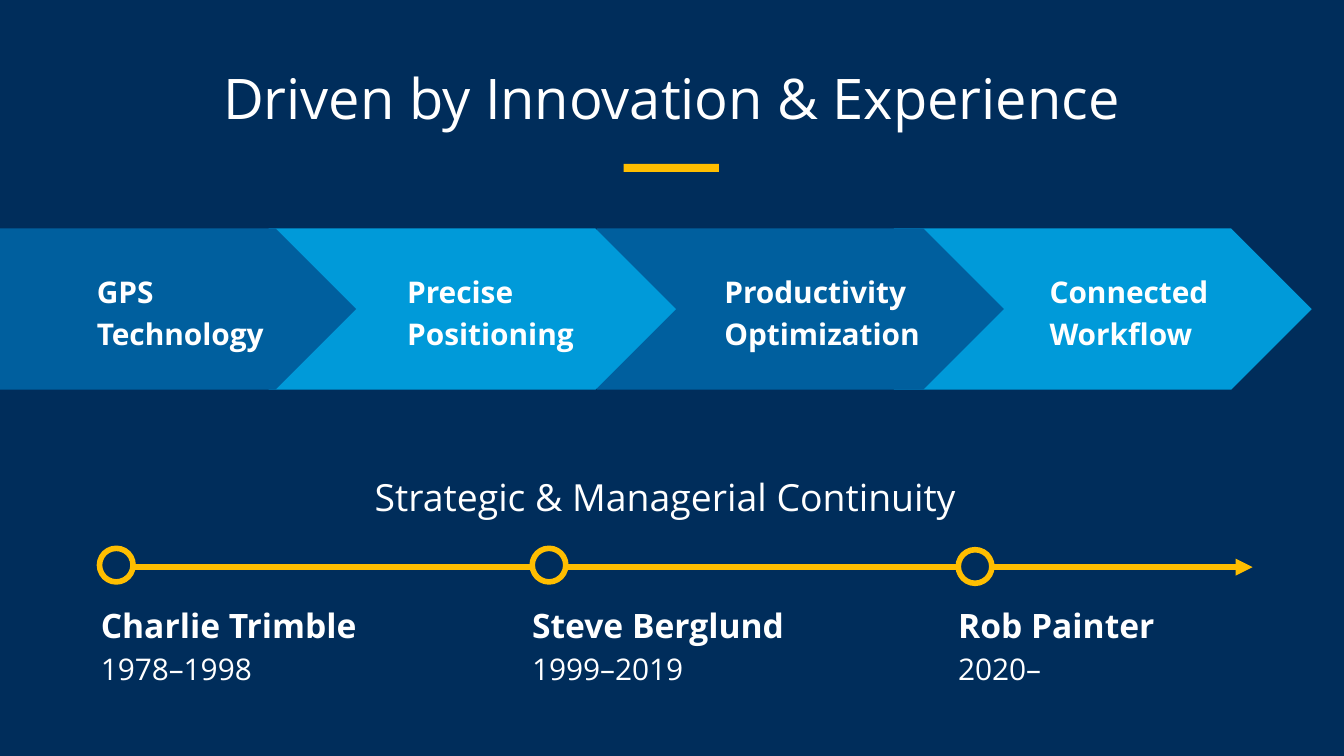
from lxml.etree import SubElement
from pptx import Presentation
from pptx.dml.color import RGBColor
from pptx.enum.shapes import MSO_CONNECTOR, MSO_SHAPE
from pptx.enum.text import MSO_ANCHOR, PP_ALIGN
from pptx.oxml.ns import qn
from pptx.util import Inches, Pt

NAVY = RGBColor(0x00, 0x2D, 0x5B)
BLUE = RGBColor(0x00, 0x5F, 0x9E)
SKY = RGBColor(0x00, 0x9A, 0xD9)
GOLD = RGBColor(0xFF, 0xBE, 0x00)
WHITE = RGBColor(0xFF, 0xFF, 0xFF)
FONT = "Open Sans"

# Arrow left, arrow width, label left, label width, label, colour
STAGES = [
    (0, 2.65, 0.57, 1.62, "GPS \nTechnology", BLUE),
    (2, 3.03, 2.88, 1.67, "Precise Positioning", SKY),
    (4.44, 3.03, 5.24, 1.74, "Productivity Optimization", BLUE),
    (6.65, 3.11, 7.66, 1.6, "Connected Workflow", SKY),
]
# Text left, text width, marker left, marker top, name, years
LEADERS = [
    (0.75, 2.11, 0.74, 4.08, "Charlie Trimble", "1978–1998"),
    (3.96, 2.84, 3.96, 4.08, "Steve Berglund", "1999–2019"),
    (7.13, 2.16, 7.13, 4.09, "Rob Painter", "2020–"),
]


def add_text(slide, box, lines, insets=(0, 0.1, 0.1, 0.1), align=PP_ALIGN.LEFT,
             anchor=MSO_ANCHOR.TOP, spacing=1.15):
    """Add a text box; each line is (text, size, bold), insets run left, top, right, bottom."""
    frame = slide.shapes.add_textbox(*map(Inches, box)).text_frame
    frame.word_wrap = True
    frame.vertical_anchor = anchor
    (frame.margin_left, frame.margin_top,
     frame.margin_right, frame.margin_bottom) = map(Inches, insets)
    for index, (text, size, bold) in enumerate(lines):
        paragraph = frame.add_paragraph() if index else frame.paragraphs[0]
        paragraph.text = text
        paragraph.alignment = align
        paragraph.line_spacing = spacing
        for run in paragraph.runs:
            run.font.name = FONT
            run.font.size = Pt(size)
            run.font.bold = bold
            run.font.color.rgb = WHITE


def add_figure(slide, kind, box, fill, line=None):
    shape = slide.shapes.add_shape(kind, *map(Inches, box))
    shape.shadow.inherit = False
    shape.fill.solid()
    shape.fill.fore_color.rgb = fill
    if line is None:
        shape.line.fill.background()
    else:
        shape.line.color.rgb = line
        shape.line.width = Pt(3)


def add_arrow(slide, left, right, y):
    connector = slide.shapes.add_connector(
        MSO_CONNECTOR.STRAIGHT, Inches(left), Inches(y), Inches(right), Inches(y))
    connector.line.color.rgb = GOLD
    connector.line.width = Pt(3)
    properties = connector._element.spPr
    SubElement(properties.find(qn("a:ln")), qn("a:tailEnd"), type="triangle")
    SubElement(properties, qn("a:effectLst"))


def add_stages(slide):
    """Draw the arrows from right to left so that each tip overlaps the next arrow."""
    for left, width, _, _, _, color in reversed(STAGES):
        add_figure(slide, MSO_SHAPE.PENTAGON, (left, 1.7, width, 1.2), color)
    for _, _, left, width, label, _ in STAGES:
        add_text(slide, (left, 1.9, width, 0.7), [(label, 16, True)],
                 insets=(0.15, 0.1, 0.1, 0.1))


def add_timeline(slide):
    add_arrow(slide, 0.99, 9.32, 4.22)
    for left, width, marker_left, marker_top, name, years in LEADERS:
        add_figure(slide, MSO_SHAPE.OVAL, (marker_left, marker_top, 0.25, 0.25), NAVY, GOLD)
        add_text(slide, (left, 4.21, width, 1), [(name, 18, True), (years, 16, False)],
                 insets=(0, 0.25, 0.1, 0.1))


def main():
    presentation = Presentation()
    presentation.slide_width = Inches(10)
    presentation.slide_height = Inches(10 * 9 / 16)
    slide = presentation.slides.add_slide(presentation.slide_layouts[6])
    slide.background.fill.solid()
    slide.background.fill.fore_color.rgb = NAVY

    add_text(slide, (0.74, 0.01, 8.52, 1.21), [("Driven by Innovation & Experience", 30, False)],
             insets=(0, 0, 0, 0.25), align=PP_ALIGN.CENTER, anchor=MSO_ANCHOR.BOTTOM, spacing=1)
    add_figure(slide, MSO_SHAPE.RECTANGLE, (4.64, 1.22, 0.71, 0.06), GOLD)
    add_stages(slide)
    add_text(slide, (0, 3.38, 10, 0.62), [("Strategic & Managerial Continuity", 20, False)],
             align=PP_ALIGN.CENTER)
    add_timeline(slide)
    presentation.save("out.pptx")


if __name__ == "__main__":
    main()
